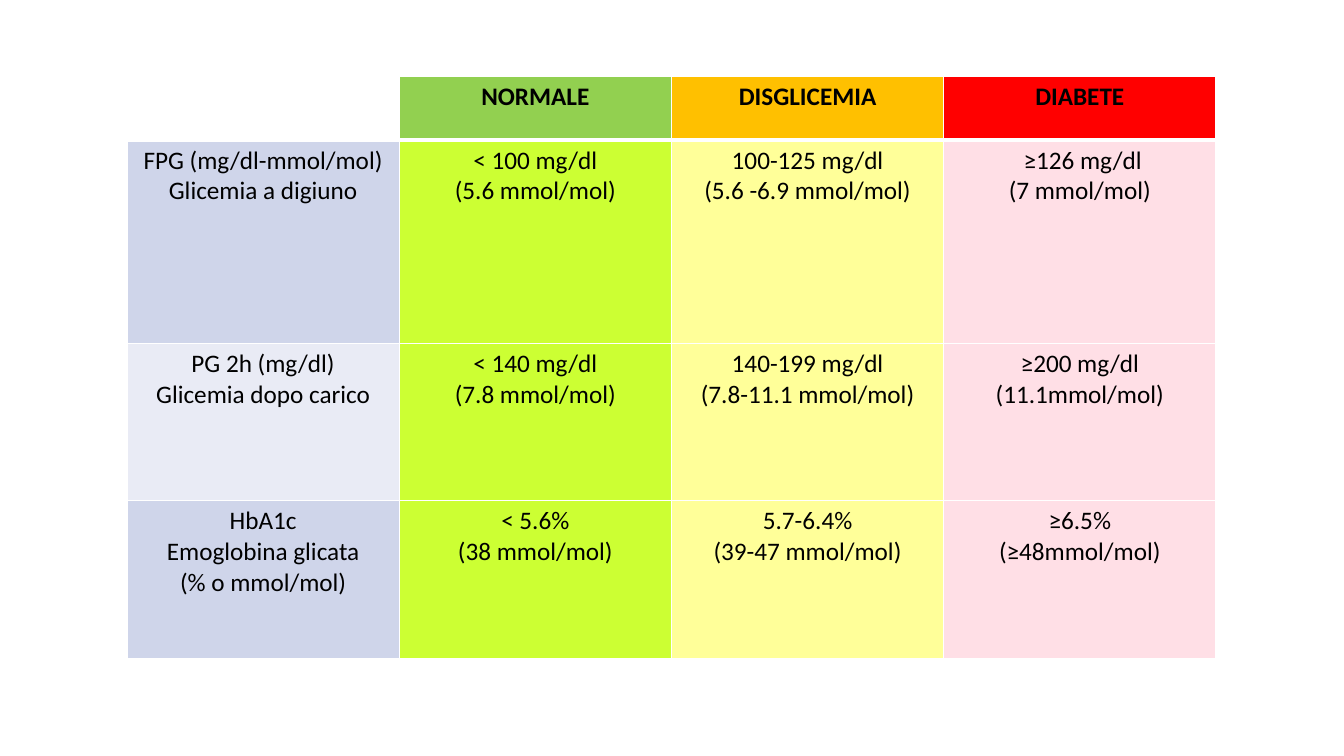
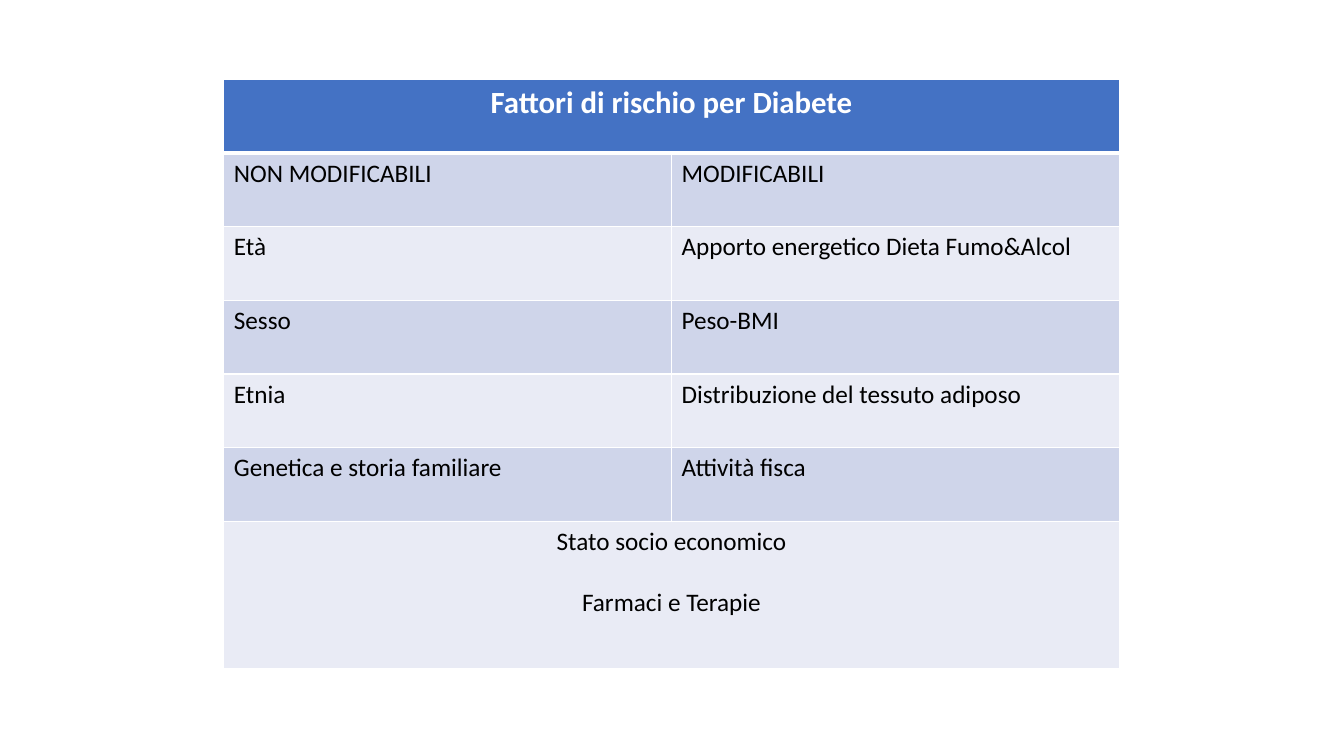
"""Build two slides of tables on diabetes thresholds and risk factors."""
import pptx
import pptx.dml.color
import pptx.enum.text
import pptx.oxml
import pptx.oxml.ns
import pptx.util

Inches = pptx.util.Inches
CENTER = pptx.enum.text.PP_ALIGN.CENTER
LEFT = pptx.enum.text.PP_ALIGN.LEFT

COLORS = {
    "white": "FFFFFF", "black": "000000", "blue": "4472C4",
    "band_dark": "CFD5EA", "band_light": "E9EBF5",
    "green": "92D050", "orange": "FFC000", "red": "FF0000",
    "lime": "CCFF33", "yellow": "FFFF99", "pink": "FFDFE6",
}
BANDS = ["band_light", "band_dark"]
BODY = {"size": pptx.util.Pt(18), "name": "Calibri", "bold": False}
HEADER = {**BODY, "bold": True}
TITLE = {**HEADER, "size": pptx.util.Pt(22)}


def add_grid(slide, left, top, column_widths, row_heights):
    """Add a table with white borders and a thick rule under its first row."""
    table = slide.shapes.add_table(
        len(row_heights), len(column_widths), Inches(left), Inches(top),
        Inches(sum(column_widths)), Inches(sum(row_heights))).table
    for column, width in zip(table.columns, column_widths):
        column.width = Inches(width)
    for row_index, height in enumerate(row_heights):
        table.rows[row_index].height = Inches(height)
        for cell in table.rows[row_index].cells:
            properties = cell._tc.get_or_add_tcPr()
            for side in "LRTB":
                thick = (row_index, side) in [(0, "B"), (1, "T")]
                properties.append(pptx.oxml.parse_xml(
                    f'<a:ln{side} {pptx.oxml.ns.nsdecls("a")} w="{38100 if thick else 12700}">'
                    f'<a:solidFill><a:srgbClr val="{COLORS["white"]}"/></a:solidFill></a:ln{side}>'))
            cell.fill.background()
    return table


def fill_cell(cell, text, fill, font=BODY, color="black", alignment=CENTER, gap=0):
    """Write one paragraph per line of text and colour the cell."""
    cell.fill.solid()
    cell.fill.fore_color.rgb = pptx.dml.color.RGBColor.from_string(COLORS[fill])
    cell.text = text
    for index, paragraph in enumerate(cell.text_frame.paragraphs):
        paragraph.alignment = alignment
        if index and gap:
            paragraph.space_before = pptx.util.Pt(gap)
        for run in paragraph.runs:
            for attribute, value in font.items():
                setattr(run.font, attribute, value)
            run.font.color.rgb = pptx.dml.color.RGBColor.from_string(COLORS[color])


presentation = pptx.Presentation()
presentation.slide_width = Inches(13.33)
presentation.slide_height = Inches(7.5)
blank = presentation.slide_layouts[6]

slide = presentation.slides.add_slide(blank)
thresholds = add_grid(slide, 1.26, 0.76, [2.7] * 4, [0.63, 2.02, 1.56, 1.56])
headings = [("NORMALE", "green"), ("DISGLICEMIA", "orange"), ("DIABETE", "red")]
for column, (heading, fill) in enumerate(headings, 1):
    fill_cell(thresholds.cell(0, column), heading, fill, HEADER)
measures = [
    ["FPG (mg/dl-mmol/mol)\nGlicemia a digiuno", "< 100 mg/dl\n(5.6 mmol/mol)",
     "100-125 mg/dl\n(5.6 -6.9 mmol/mol)", " ≥126 mg/dl\n(7 mmol/mol)"],
    ["PG 2h (mg/dl)\nGlicemia dopo carico", "< 140 mg/dl\n(7.8 mmol/mol)",
     "140-199 mg/dl\n(7.8-11.1 mmol/mol)", "≥200 mg/dl\n(11.1mmol/mol)"],
    ["HbA1c\nEmoglobina glicata\n(% o mmol/mol)", "< 5.6%\n(38 mmol/mol)",
     "5.7-6.4%\n(39-47 mmol/mol)", "≥6.5%\n(≥48mmol/mol)"],
]
for row, texts in enumerate(measures, 1):
    fills = [BANDS[row % 2], "lime", "yellow", "pink"]
    for column, (text, fill) in enumerate(zip(texts, fills)):
        fill_cell(thresholds.cell(row, column), text, fill)

slide = presentation.slides.add_slide(blank)
factors = add_grid(slide, 2.22, 0.79, [4.44] * 2, [0.73] * 6 + [1.46])
for row in (0, 6):
    factors.cell(row, 0).merge(factors.cell(row, 1))
fill_cell(factors.cell(0, 0), "Fattori di rischio per Diabete", "blue", TITLE, "white")
factor_pairs = [
    ("NON MODIFICABILI", "MODIFICABILI"),
    ("Età", "Apporto energetico Dieta Fumo&Alcol"),
    ("Sesso", "Peso-BMI"),
    ("Etnia", "Distribuzione del tessuto adiposo"),
    ("Genetica e storia familiare", "Attività fisca"),
]
for row, pair in enumerate(factor_pairs, 1):
    for column, text in enumerate(pair):
        fill_cell(factors.cell(row, column), text, BANDS[row % 2], alignment=LEFT)
fill_cell(factors.cell(6, 0), "Stato socio economico\nFarmaci e Terapie", BANDS[0], gap=22)

presentation.save("out.pptx")
